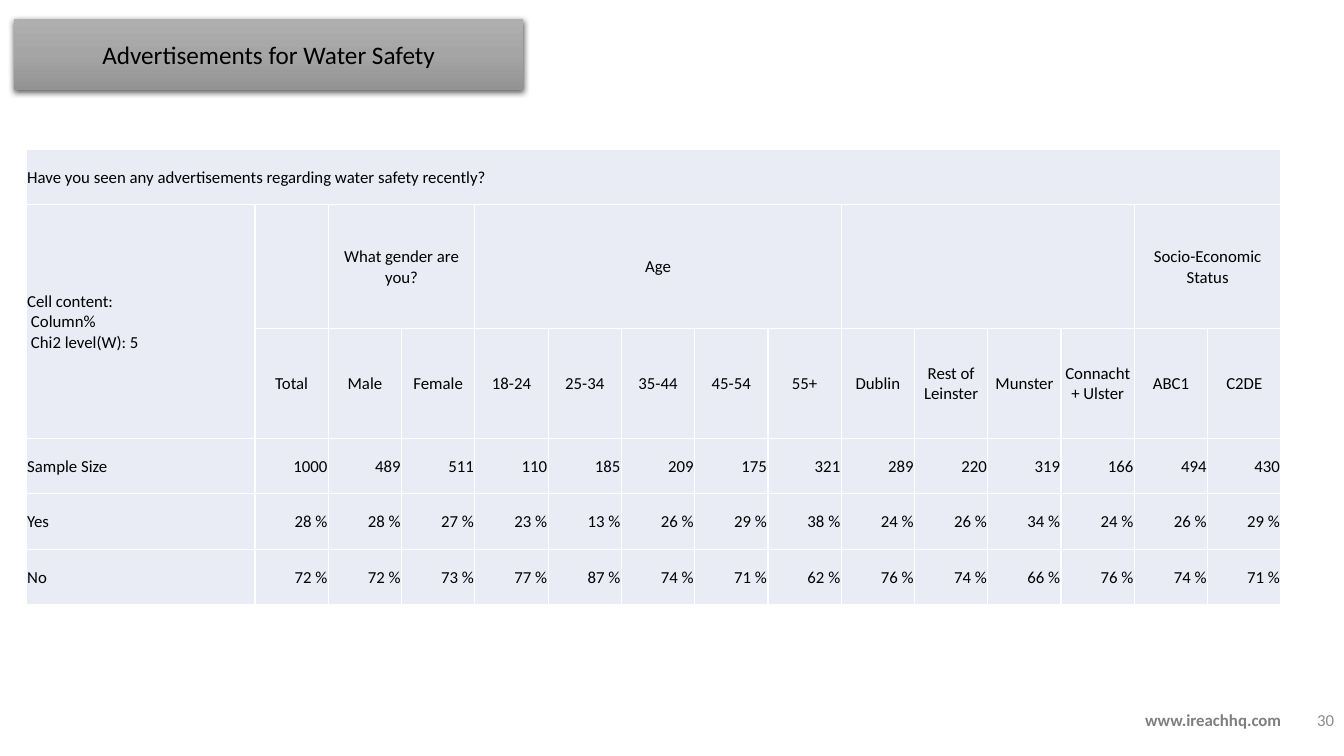
import pptx
import pptx.dml.color
import pptx.enum.text
import pptx.oxml
import pptx.oxml.ns
import pptx.util

Inches, Pt = pptx.util.Inches, pptx.util.Pt
ALIGN = pptx.enum.text.PP_ALIGN
MIDDLE = pptx.enum.text.MSO_ANCHOR.MIDDLE

TITLE = "Advertisements for Water Safety"
WEBSITE = "www.ireachhq.com"
PAGE_NUMBER = "30"
QUESTION = "Have you seen any advertisements regarding water safety recently?"
CELL_NOTE = "Cell content:\v Column%\v Chi2 level(W): 5"
GROUPS = [
    ("", ["Total"]),
    ("What gender are you?", ["Male", "Female"]),
    ("Age", ["18-24", "25-34", "35-44", "45-54", "55+"]),
    ("", ["Dublin", "Rest of Leinster", "Munster", "Connacht + Ulster"]),
    ("Socio-Economic Status", ["ABC1", "C2DE"]),
]
SAMPLE_SIZES = [1000, 489, 511, 110, 185, 209, 175, 321, 289, 220, 319, 166, 494, 430]
YES_SHARES = [28, 28, 27, 23, 13, 26, 29, 38, 24, 26, 34, 24, 26, 29]
RESULTS = [
    ("Sample Size", [str(size) for size in SAMPLE_SIZES]),
    ("Yes", [f"{share} %" for share in YES_SHARES]),
    ("No", [f"{100 - share} %" for share in YES_SHARES]),
]
TABLE_BOX = (0.26, 1.48, 12.45, 4.53)
LABEL_WIDTH = 2.27
ROW_HEIGHTS = [0.55, 1.23, 1.09, 0.55, 0.55, 0.55]
CELL_FORMAT = {
    "vertical_anchor": MIDDLE,
    "margin_left": Inches(0.01),
    "margin_right": Inches(0.01),
    "margin_top": Inches(0.01),
    "margin_bottom": 0,
}
TITLE_STOPS = [(0, "AFAFAF"), (50, "A5A5A5"), (100, "939393")]


def color(value):
    return pptx.dml.color.RGBColor.from_string(value)


def inches(lengths):
    return [Inches(length) for length in lengths]


def drawing_xml(markup):
    """Parse one element, giving its root tag the drawing namespace."""
    tag, rest = markup.split(" ", 1)
    return pptx.oxml.parse_xml(f"{tag} {pptx.oxml.ns.nsdecls('a')} {rest}")


def write(frame, text, size=12, ink="000000", bold=False, align=ALIGN.LEFT):
    frame.text = text
    para = frame.paragraphs[0]
    para.alignment = align
    for span in para.runs:
        for name, value in {"name": "Calibri", "size": Pt(size), "bold": bold}.items():
            setattr(span.font, name, value)
        span.font.color.rgb = color(ink)


def add_title(page):
    title = page.shapes.title
    title.left, title.top, title.width, title.height = inches((0.14, 0.19, 5.05, 0.7))
    stops = "".join(f'<a:gs pos="{place * 1000}"><a:srgbClr val="{shade}"/></a:gs>'
                    for place, shade in TITLE_STOPS)
    properties = title.element.spPr
    for markup in (
        '<a:prstGeom prst="roundRect"><a:avLst/></a:prstGeom>',
        f'<a:gradFill rotWithShape="1"><a:gsLst>{stops}</a:gsLst>'
        '<a:lin ang="5400000" scaled="0"/></a:gradFill>',
        f'<a:effectLst ><a:outerShdw blurRad="{Pt(4.5)}" dist="{Pt(1.5)}" dir="5400000" '
        'algn="ctr" rotWithShape="0"><a:srgbClr val="000000"><a:alpha val="63000"/>'
        '</a:srgbClr></a:outerShdw></a:effectLst>',
    ):
        properties.append(drawing_xml(markup))
    title.text_frame.vertical_anchor = MIDDLE
    title.text_frame.word_wrap = True
    write(title.text_frame, TITLE, size=18, align=ALIGN.CENTER)


def add_label(page, box, text, **style):
    frame = page.shapes.add_textbox(*inches(box)).text_frame
    frame.word_wrap = True
    frame.vertical_anchor = MIDDLE
    write(frame, text, **style)
    return frame


def style_cell(cell):
    for name, value in CELL_FORMAT.items():
        setattr(cell, name, value)
    for side in "LRTB":
        cell._tc.get_or_add_tcPr().append(drawing_xml(
            f'<a:ln{side} w="{Pt(1)}"><a:solidFill><a:srgbClr val="FFFFFF"/>'
            f'</a:solidFill></a:ln{side}>'))
    cell.fill.solid()
    cell.fill.fore_color.rgb = color("E9EBF5")


def add_results_table(page):
    column_count = 1 + len(SAMPLE_SIZES)
    table = page.shapes.add_table(
        len(ROW_HEIGHTS), column_count, *inches(TABLE_BOX)).table
    value_width = (TABLE_BOX[2] - LABEL_WIDTH) / len(SAMPLE_SIZES)
    for index, column in enumerate(table.columns):
        column.width = Inches(value_width if index else LABEL_WIDTH)
    for row, height in zip(table.rows, ROW_HEIGHTS):
        row.height = Inches(height)
    for cell in table.iter_cells():
        style_cell(cell)

    def put(row, column, text, align=ALIGN.LEFT):
        write(table.cell(row, column).text_frame, text, align=align)

    table.cell(0, 0).merge(table.cell(0, column_count - 1))
    put(0, 0, QUESTION)
    table.cell(1, 0).merge(table.cell(2, 0))
    put(1, 0, CELL_NOTE)

    start = 1
    for heading, names in GROUPS:
        if len(names) > 1:
            table.cell(1, start).merge(table.cell(1, start + len(names) - 1))
        if heading:
            put(1, start, heading, ALIGN.CENTER)
        for column, name in enumerate(names, start):
            put(2, column, name, ALIGN.CENTER)
        start += len(names)

    for row, (label, values) in enumerate(RESULTS, 3):
        put(row, 0, label)
        for column, value in enumerate(values, 1):
            put(row, column, value, ALIGN.RIGHT)


def main():
    deck = pptx.Presentation()
    deck.slide_width, deck.slide_height = inches((13.33, 7.5))
    page = deck.slides.add_slide(deck.slide_layouts.get_by_name("Title Only"))
    website = add_label(page, (11.26, 6.96, 1.87, 0.38), WEBSITE, ink="7F7F7F", bold=True)
    website.paragraphs[0].line_spacing = 0.9
    add_label(page, (10.33, 6.94, 3, 0.4), PAGE_NUMBER, ink="8C8C8C", align=ALIGN.RIGHT)
    add_title(page)
    add_results_table(page)
    deck.save("out.pptx")


if __name__ == "__main__":
    main()
